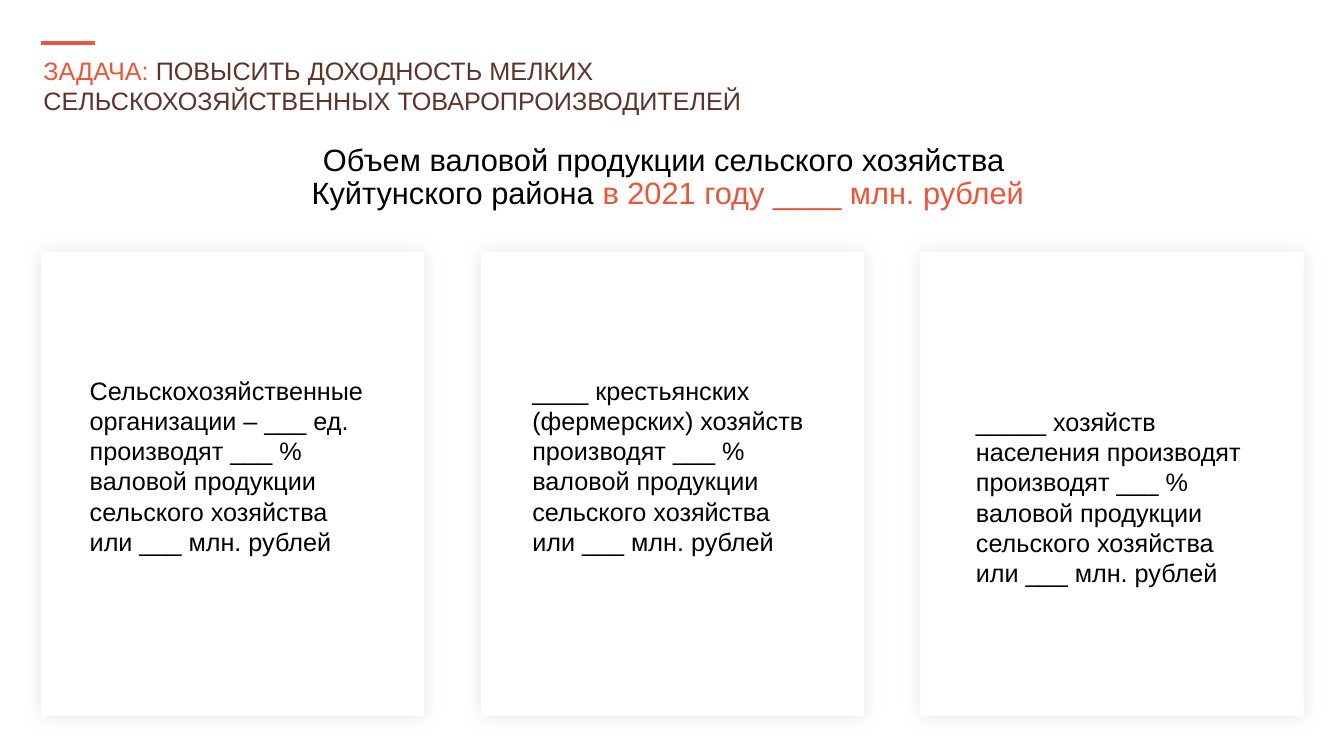
from dataclasses import dataclass

from lxml.etree import SubElement
from pptx import Presentation
from pptx.dml.color import RGBColor
from pptx.enum.shapes import MSO_CONNECTOR as Connector, MSO_SHAPE as Shape
from pptx.enum.text import MSO_ANCHOR as Anchor, PP_ALIGN as Align
from pptx.oxml.ns import qn
from pptx.util import Emu, Pt

PX = 9144


@dataclass(frozen=True)
class Theme:
    font: str = "Arial"
    accent: str = "ED5539"
    brown: str = "5E3427"
    ink: str = "000000"
    paper: str = "FFFFFF"
    text_size: int = 18
    lead_size: int = 22
    rule_width: int = 3
    shadow_blur: int = 14
    shadow_percent: int = 9


def px(*lengths):
    return [Emu(length * PX) for length in lengths]


def write(frame, *runs, font, size, align=Align.LEFT, spacing=1.0, indent=0):
    frame.word_wrap = True
    frame.vertical_anchor = Anchor.TOP
    frame.margin_left, frame.margin_right = px(10 + indent, 10)
    frame.margin_top, frame.margin_bottom = px(5, 5)
    paragraph = frame.paragraphs[0]
    paragraph.alignment = align
    paragraph.line_spacing = spacing
    paragraph.space_before = Pt(0)
    for words, color in runs:
        for number, line in enumerate(words.split("\n")):
            if number:
                paragraph.add_line_break()
            run = paragraph.add_run()
            run.text = line
            run.font.name = font
            run.font.size = Pt(size)
            run.font.color.rgb = RGBColor.from_string(color)


class SlideBuilder:
    def __init__(self, slide, theme):
        self.slide = slide
        self.theme = theme

    def title(self, box, *runs):
        heading = self.slide.shapes.title
        heading.left, heading.top, heading.width, heading.height = px(*box)
        write(heading.text_frame, *runs,
              font=self.theme.font, size=self.theme.text_size)

    def text(self, box, *runs, size, **layout):
        caption = self.slide.shapes.add_textbox(*px(*box))
        write(caption.text_frame, *runs,
              font=self.theme.font, size=size, **layout)

    def rule(self, left, right, y):
        accent_rule = self.slide.shapes.add_connector(
            Connector.STRAIGHT, *px(left, y, right, y))
        accent_rule.line.color.rgb = RGBColor.from_string(self.theme.accent)
        accent_rule.line.width = Pt(self.theme.rule_width)
        SubElement(accent_rule._element.spPr, qn("a:effectLst"))

    def card(self, box):
        panel = self.slide.shapes.add_shape(Shape.RECTANGLE, *px(*box))
        panel.fill.solid()
        panel.fill.fore_color.rgb = RGBColor.from_string(self.theme.paper)
        panel.line.fill.background()
        panel.shadow.inherit = False
        effects = panel._element.spPr.find(qn("a:effectLst"))
        shadow = SubElement(effects, qn("a:outerShdw"), algn="ctr", dist="0",
                            dir="0", rotWithShape="0",
                            blurRad=str(Pt(self.theme.shadow_blur)))
        tint = SubElement(shadow, qn("a:srgbClr"), val=self.theme.ink)
        SubElement(tint, qn("a:alpha"),
                   val=str(self.theme.shadow_percent * 1000))


def main():
    theme = Theme()
    deck = Presentation()
    deck.slide_width, deck.slide_height = px(1333, 750)
    page = SlideBuilder(deck.slides.add_slide(deck.slide_layouts[5]), theme)

    page.rule(41, 94, 43)
    page.title(
        (33, 50, 1006, 66),
        ("ЗАДАЧА: ", theme.accent),
        ("ПОВЫСИТЬ ДОХОДНОСТЬ МЕЛКИХ\n"
         "СЕЛЬСКОХОЗЯЙСТВЕННЫХ ТОВАРОПРОИЗВОДИТЕЛЕЙ", theme.brown))
    page.text(
        (33, 139, 1259, 78),
        ("Объем валовой продукции сельского хозяйства \n"
         "Куйтунского района ", theme.ink),
        ("в 2021 году ____ млн. рублей", theme.accent),
        size=theme.lead_size, align=Align.CENTER, spacing=0.9)

    output = ("производят ___ % валовой продукции сельского хозяйства "
              "или ___ млн. рублей")
    producers = [
        (67, 367, 192, "Сельскохозяйственные организации – ___ ед."),
        (506, 367, 192, "____ крестьянских (фермерских) хозяйств"),
        (946, 398, 162, "_____ хозяйств населения производят"),
    ]
    for column, (left, top, height, producer) in enumerate(producers):
        page.card((41 + 436 * column, 250, 380, 460))
        page.text((left, top, 314, height), (f"{producer} {output}", theme.ink),
                  size=theme.text_size, indent=12)

    deck.save("out.pptx")


if __name__ == "__main__":
    main()
